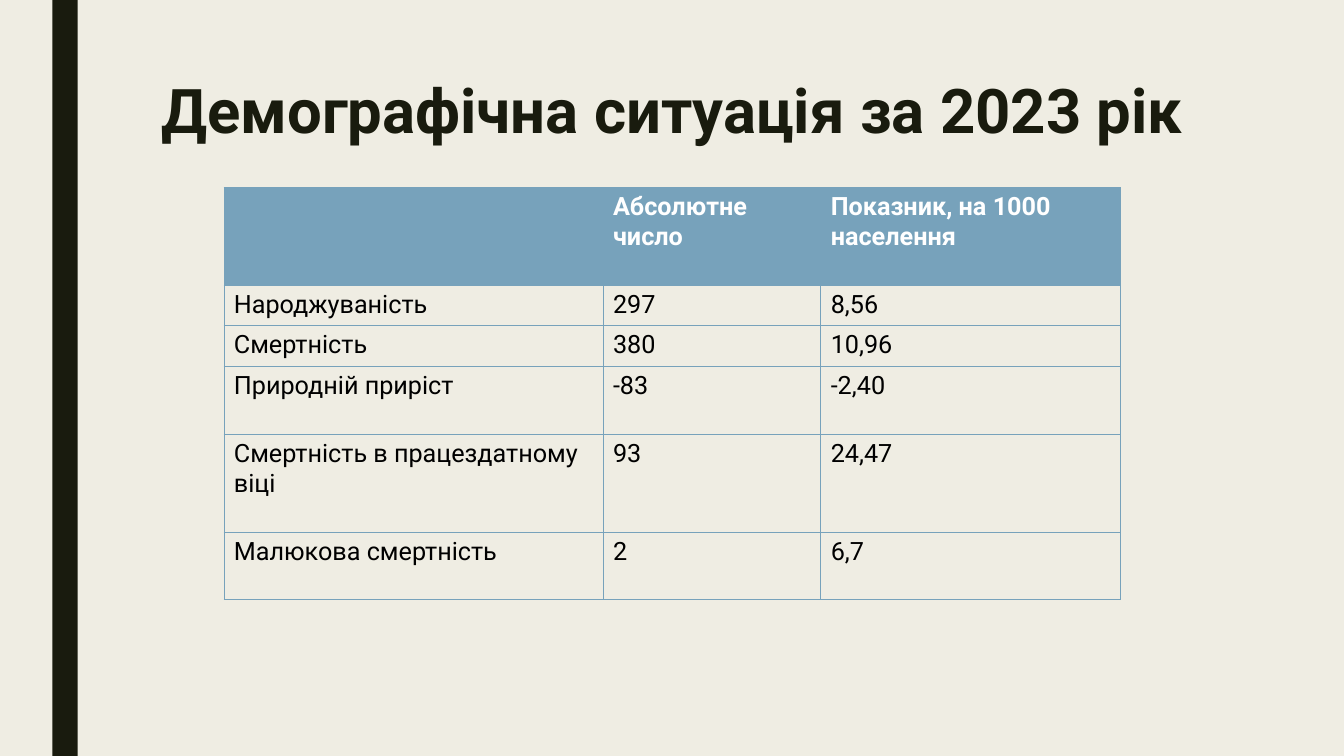
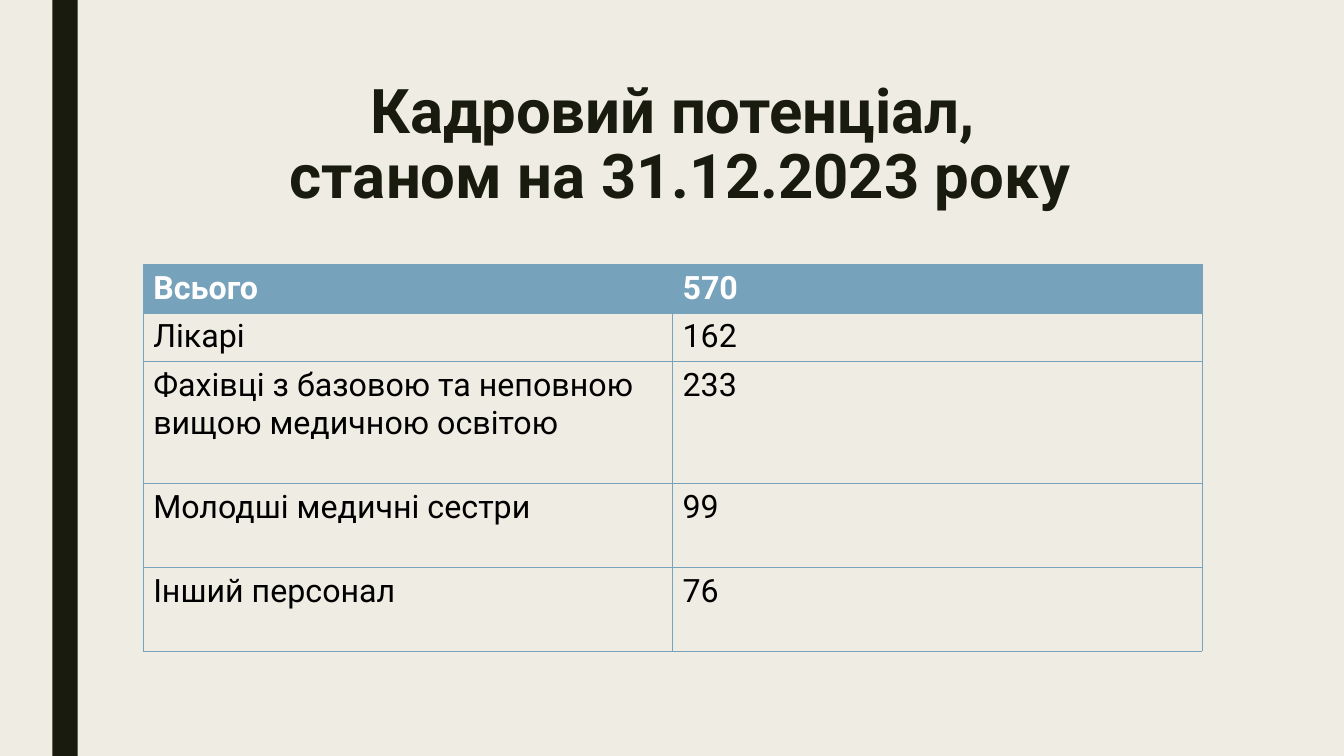
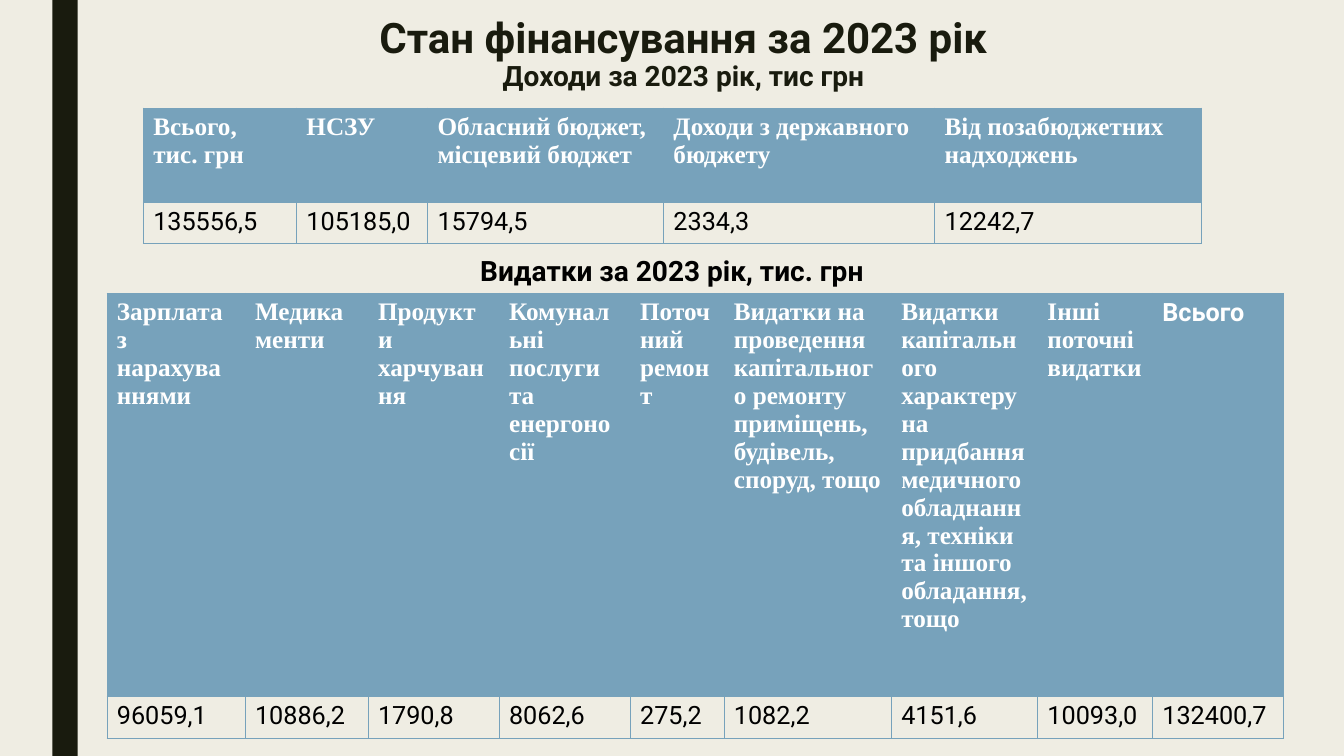
from lxml import etree
from pptx import Presentation
from pptx import util as u
from pptx.dml.color import RGBColor
from pptx.enum import shapes, text
from pptx.oxml.ns import qn

DARK, BLUE, CREAM = "191B0E", "77A2BB", "EFEDE3"
WHITE, BLACK = "FFFFFF", "000000"
SANS, SERIF = "Roboto", "Times New Roman"
LEFT, MID = text.PP_ALIGN.LEFT, text.PP_ALIGN.CENTER


def color(code):
    return RGBColor.from_string(code)


def paint(fill, code):
    fill.solid()
    fill.fore_color.rgb = color(code)


def style(par, size, code, bold=True, face=SANS):
    font = par.font
    font.name, font.size, font.bold = face, u.Pt(size), bold
    font.color.rgb = color(code)


def dress(master, slide):
    """Give the master its background and the dark band, drawn first on a slide."""
    paint(master.background.fill, CREAM)
    band = slide.shapes.add_shape(
        shapes.MSO_SHAPE.RECTANGLE, u.Inches(0.52), 0, u.Inches(0.25), u.Inches(7.5))
    band.shadow.inherit = False
    paint(band.fill, DARK)
    band.line.fill.background()
    master.shapes.element.append(band.element)


def label(slide, box, lines, code=DARK, align=MID, gap=0.89):
    """Add bold text; lines holds (words, size) pairs, one paragraph each."""
    frame = slide.shapes.add_textbox(*map(u.Inches, box)).text_frame
    frame.word_wrap = True
    for i, (words, size) in enumerate(lines):
        par = frame.add_paragraph() if i else frame.paragraphs[0]
        par.text, par.alignment, par.line_spacing = words, align, gap
        style(par, size, code)


def border(cell):
    props = cell._tc.get_or_add_tcPr()
    for side in ("a:lnL", "a:lnR", "a:lnT", "a:lnB"):
        line = etree.SubElement(props, qn(side), w=str(u.Pt(0.5)))
        fill = etree.SubElement(line, qn("a:solidFill"))
        etree.SubElement(fill, qn("a:srgbClr"), val=BLUE)


def table(slide, left, top, cols, rows, data, size=18, face=SANS):
    """Add a grid with a blue first row, whose typeface is face."""
    grid = slide.shapes.add_table(
        len(rows), len(cols), u.Inches(left), u.Inches(top),
        u.Inches(sum(cols)), u.Inches(sum(rows))).table
    for col, width in zip(grid.columns, cols):
        col.width = u.Inches(width)
    for i, (row, height) in enumerate(zip(grid.rows, rows)):
        row.height = u.Inches(height)
        for cell, words in zip(row.cells, data[i]):
            border(cell)
            cell.text = words
            par = cell.text_frame.paragraphs[0]
            if i:
                cell.fill.background()
                style(par, size, BLACK, False)
            else:
                paint(cell.fill, BLUE)
                style(par, size, WHITE, True, face)
    return grid


def people(slide):
    label(slide, (1.5, 0.75, 10.5, 0.91),
          [("Демографічна ситуація за 2023 рік", 44)], align=LEFT)
    table(slide, 2.22, 1.86, [3.76, 2.16, 2.97],
          [0.97, 0.39, 0.39, 0.68, 0.97, 0.67], [
              ("", "Абсолютне число", "Показник, на 1000 населення"),
              ("Народжуваність", "297", "8,56"),
              ("Смертність", "380", "10,96"),
              ("Природній приріст", "-83", "-2,40"),
              ("Смертність в працездатному віці", "93", "24,47"),
              ("Малюкова смертність", "2", "6,7")])


def staff(slide):
    label(slide, (1.5, 0.75, 10.5, 1.62),
          [("Кадровий потенціал, \vстаном на 31.12.2023 року", 44)])
    table(slide, 1.42, 2.62, [5.25, 5.25], [0.48, 0.48, 1.21, 0.83, 0.83], [
        ("Всього", "570"),
        ("Лікарі", "162"),
        ("Фахівці з базовою та неповною вищою медичною освітою", "233"),
        ("Молодші медичні сестри", "99"),
        ("Інший персонал", "76")], size=23)


def money(slide):
    label(slide, (1.53, 0.13, 10.5, 1.37),
          [("Стан фінансування за 2023 рік", 30), ("Доходи за 2023 рік, тис грн", 20)])
    table(slide, 1.42, 1.07, [1.52, 1.3, 2.34, 2.69, 2.65], [0.94, 0.39], [
        ("Всього, тис. грн", "НСЗУ", "Обласний бюджет, місцевий бюджет",
         "Доходи з державного бюджету", "Від позабюджетних надходжень"),
        ("135556,5", "105185,0", "15794,5", "2334,3", "12242,7")], face=SERIF)
    label(slide, (3.22, 2.47, 6.89, 0.43),
          [("Видатки за 2023 рік, тис. грн", 20)], BLACK, gap=1.0)
    costs = table(
        slide, 1.06, 2.91, [1.37, 1.22, 1.3, 1.3, 0.93, 1.66, 1.45, 1.14, 1.3],
        [4.0, 0.41], [
            ("Зарплата з нарахуваннями", "Медикаменти", "Продукти харчування",
             "Комунальні послуги та енергоносії", "Поточний ремонт",
             "Видатки на проведення капітального ремонту приміщень, будівель, "
             "споруд, тощо",
             "Видатки капітального характеру на придбання медичного обладнання, "
             "техніки та іншого обладання, тощо",
             "Інші поточні видатки", "Всього"),
            ("96059,1", "10886,2", "1790,8", "8062,6", "275,2", "1082,2",
             "4151,6", "10093,0", "132400,7")], face=SERIF)
    costs.cell(0, 8).text_frame.paragraphs[0].font.name = SANS


def main():
    prs = Presentation()
    prs.slide_width, prs.slide_height = u.Inches(13.33), u.Inches(7.5)
    for i, build in enumerate((people, staff, money)):
        slide = prs.slides.add_slide(prs.slide_layouts[6])
        if i == 0:
            dress(prs.slide_master, slide)
        build(slide)
    prs.save("out.pptx")


if __name__ == "__main__":
    main()
